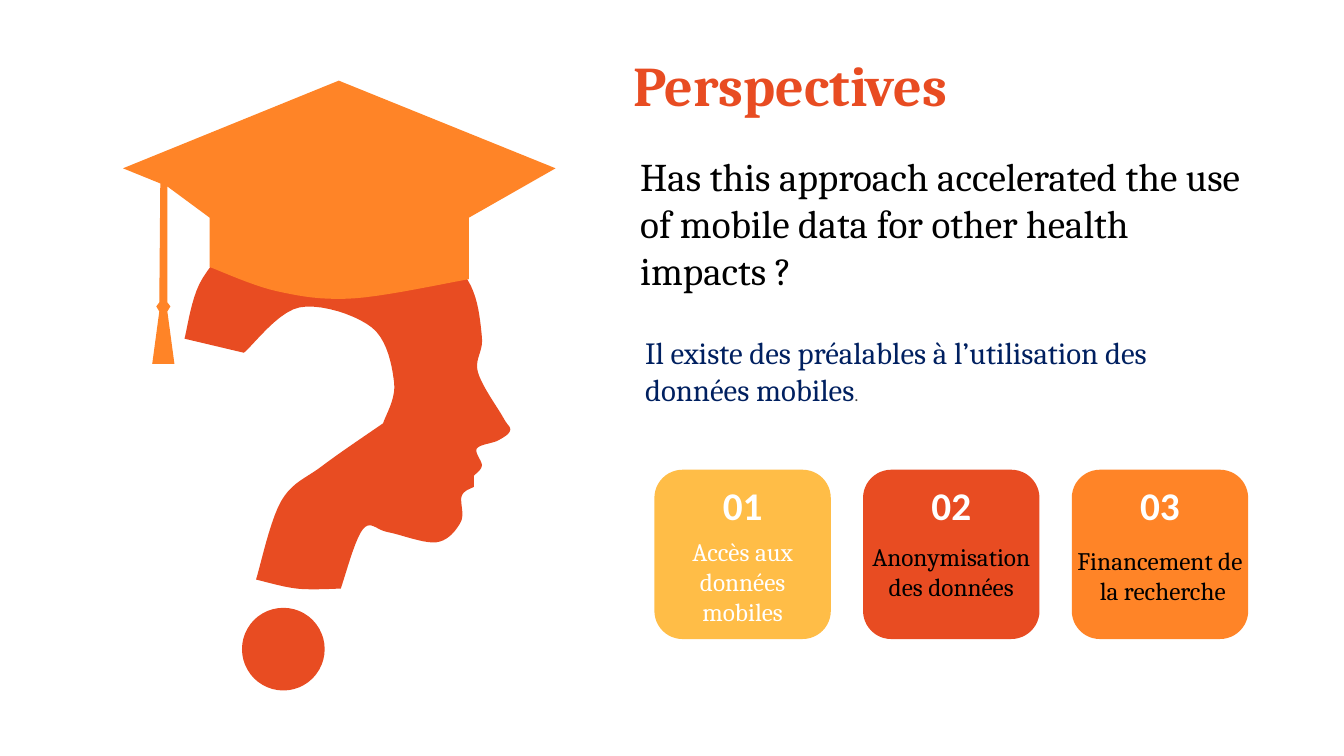
from pptx import Presentation
from pptx.dml.color import RGBColor
from pptx.enum.shapes import MSO_SHAPE as Shape
from pptx.enum.text import MSO_ANCHOR as Anchor, MSO_AUTO_SIZE as AutoSize, PP_ALIGN as Align
from pptx.util import Inches, Pt

COLORS = {
    "red": "E84C22", "orange": "FF8427", "yellow": "FFBD47", "navy": "002060",
    "gray": "404040", "black": "000000", "white": "FFFFFF",
}

# Fill, caption, caption colour, caption width, top within the card, height
CARDS = [
    ("yellow", "Accès aux données mobiles", "white", 1.55, 0.61, 1.01),
    ("red", "Anonymisation des données", "black", 2.07, 0.66, 0.71),
    ("orange", "Financement de\n la recherche", "black", 2.35, 0.7, 0.71),
]

TITLE = {"name": "Cambria", "size": Pt(40), "bold": True}
QUESTION = {"name": "Cambria", "size": Pt(28)}
STATEMENT = {"name": "Cambria", "size": Pt(22)}
FULL_STOP = {"name": "Calibri", "size": Pt(12)}
NUMBER = {"name": "Calibri", "size": Pt(28), "bold": True}
CAPTION = {"name": "Cambria", "size": Pt(18)}


def paint(shape, color):
    shape.shadow.inherit = False
    shape.fill.solid()
    shape.fill.fore_color.rgb = RGBColor.from_string(COLORS[color])
    shape.line.fill.background()


def add_preset(slide, kind, box, color):
    paint(slide.shapes.add_shape(kind, *map(Inches, box)), color)


def add_run(paragraph, text, style, color):
    run = paragraph.add_run()
    run.text = text
    for name, value in style.items():
        setattr(run.font, name, value)
    run.font.color.rgb = RGBColor.from_string(COLORS[color])


def add_text(slide, box, text, style, color, align=Align.LEFT, **frame_format):
    frame = slide.shapes.add_textbox(*map(Inches, box)).text_frame
    for name, value in {"word_wrap": True, **frame_format}.items():
        setattr(frame, name, value)
    for index, line in enumerate(text.split("\n")):
        paragraph = frame.add_paragraph() if index else frame.paragraphs[0]
        paragraph.alignment = align
        add_run(paragraph, line, style, color)
    return frame


def smooth(knots, steps=10):
    """Run a Catmull-Rom curve through the knots."""
    padded = [knots[0], *knots, knots[-1]]
    points = [knots[0]]
    for a, b, c, d in zip(padded, padded[1:], padded[2:], padded[3:]):
        for step in range(1, steps + 1):
            t = step / steps
            points.append(tuple(
                q + t * (r - p + t * (2 * p - 5 * q + 4 * r - s + t * (3 * (q - r) + s - p))) / 2
                for p, q, r, s in zip(a, b, c, d)))
    return points


def add_outline(slide, left, top, points, color):
    start, *others = [(Inches(left + x), Inches(top + y)) for x, y in points]
    builder = slide.shapes.build_freeform(*start)
    builder.add_line_segments(others, close=True)
    paint(builder.convert_to_shape(), color)


def add_head(slide, left, top):
    skull_to_lips = [
        (0, 1.28), (0.18, 0.68), (0.69, 0.18), (1.49, 0), (2.3, 0.21), (2.81, 0.7),
        (2.95, 1.26), (2.91, 1.61), (3.16, 2.06), (3.23, 2.19), (3.11, 2.29),
        (2.9, 2.37), (2.95, 2.54), (2.87, 2.64),
    ]
    chin_to_neck = [
        (2.87, 2.75), (2.75, 2.84), (2.74, 3.1), (2.5, 3.3), (2.02, 3.2), (1.77, 3.17),
        (1.55, 3.76),
    ]
    base = [(1.55, 3.76), (1.12, 3.76), (0.71, 3.67)]
    stem = [(0.71, 3.67), (0.96, 2.89), (1.37, 2.54), (1.97, 2.12)]
    hook = [(1.97, 2.12), (2.08, 1.72), (1.86, 1.17), (1.14, 0.97), (0.59, 1.42)]
    strokes = (skull_to_lips, chin_to_neck, base, stem, hook)
    add_outline(slide, left, top, [point for stroke in strokes for point in smooth(stroke)], "red")
    # Dot of the question mark
    add_preset(slide, Shape.OVAL, (left + 0.57, top + 3.95, 0.82, 0.82), "red")


def add_cap(slide, left, top):
    board = [(2.14, 0), (0, 0.87), (0.37, 1.02)]
    # The tassel is the same on both sides of its cord
    middle = 0.4
    cord = [(0.04, 2.2), (0.07, 2.24), (0.04, 2.29), (0.11, 2.81)]
    tassel = [(middle - x, y) for x, y in cord] + [(middle + x, y) for x, y in reversed(cord)]
    brim = smooth([(0.86, 1.85), (1.53, 2.09), (2.29, 2.16), (3.43, 1.97)])
    points = [*board, *tassel, (0.44, 1.05), (0.86, 1.36), *brim, (3.43, 1.36), (4.29, 0.87)]
    add_outline(slide, left, top, points, "orange")


def add_texts(slide, left, top):
    # Title
    title = add_text(slide, (left, top, 6.78, 1.45), "Perspectives", TITLE, "red",
                     vertical_anchor=Anchor.MIDDLE)
    title.paragraphs[0].line_spacing = 0.9
    # Question
    add_text(slide, (left + 0.12, top + 1.36, 6.09, 1.41),
             "Has this approach accelerated the use of mobile data for other health impacts ?",
             QUESTION, "black", auto_size=AutoSize.SHAPE_TO_FIT_TEXT,
             margin_left=Inches(0.05), margin_right=Inches(0.03), margin_top=0, margin_bottom=0)
    # Statement
    statement = add_text(slide, (left + 0.12, top + 3.11, 6, 0.84),
                         "Il existe des préalables à l’utilisation des données mobiles",
                         STATEMENT, "navy", auto_size=AutoSize.SHAPE_TO_FIT_TEXT)
    add_run(statement.paragraphs[0], ".", FULL_STOP, "gray")


def add_cards(slide, left, top, width=1.75, height=1.68, pitch=2.07):
    for index, (fill, caption, color, text_width, text_top, text_height) in enumerate(CARDS):
        x = left + index * pitch
        add_preset(slide, Shape.ROUNDED_RECTANGLE, (x, top, width, height), fill)
        add_text(slide, (x + 0.38, top + 0.08, 0.99, 0.53), f"{index + 1:02}", NUMBER, "white",
                 Align.CENTER, vertical_anchor=Anchor.MIDDLE)
        add_text(slide, (x + (width - text_width) / 2, top + text_top, text_width, text_height),
                 caption, CAPTION, color, Align.CENTER, auto_size=AutoSize.SHAPE_TO_FIT_TEXT)


def main():
    presentation = Presentation()
    presentation.slide_width = Inches(13.33)
    presentation.slide_height = Inches(7.5)
    slide = presentation.slides.add_slide(presentation.slide_layouts[6])
    add_head(slide, 1.83, 2.08)
    add_cap(slide, 1.22, 0.8)
    add_texts(slide, 6.18, 0.15)
    add_cards(slide, 6.49, 4.66)
    presentation.save("out.pptx")


if __name__ == "__main__":
    main()
